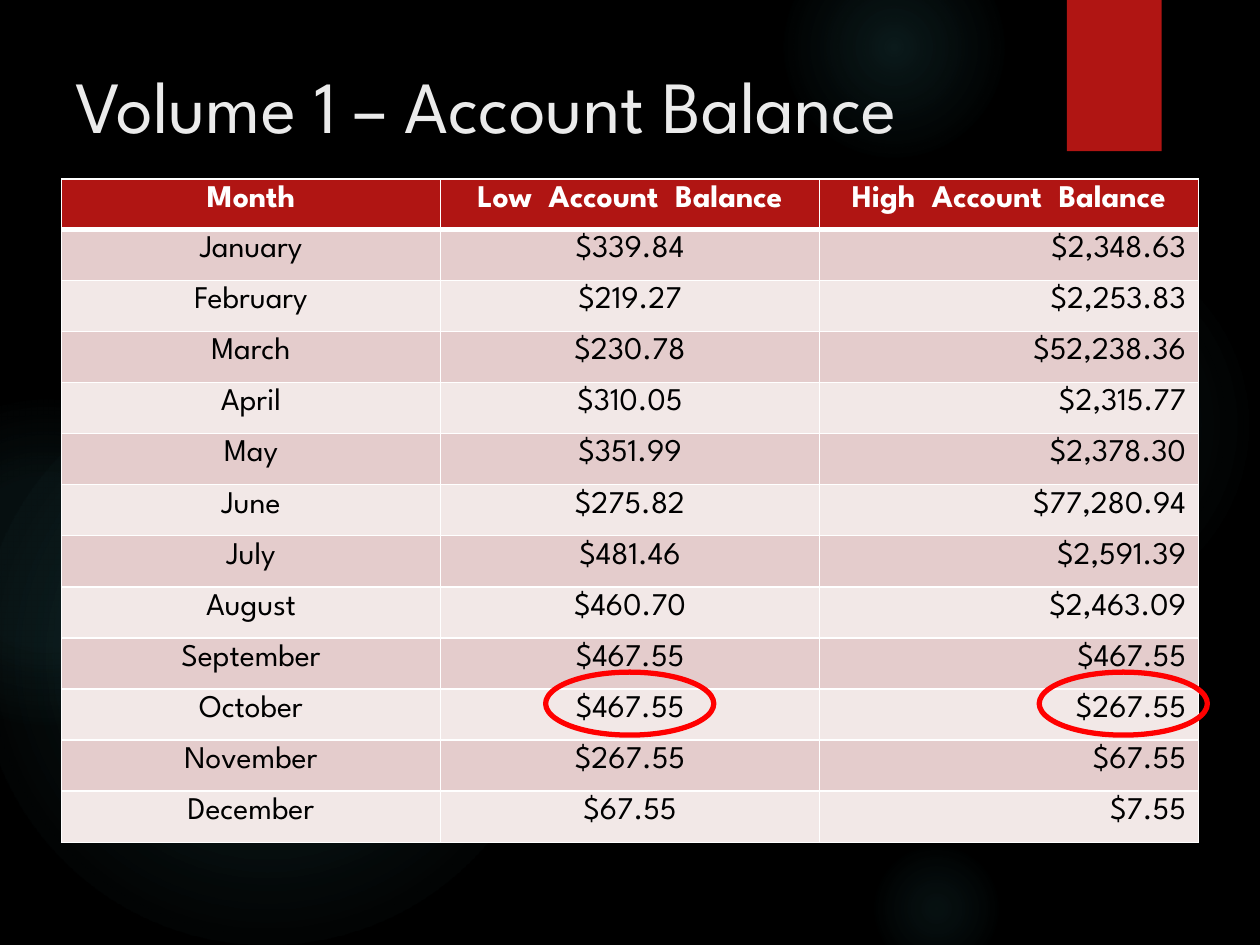
from lxml import etree
from pptx import Presentation
from pptx.dml.color import RGBColor
from pptx.enum.shapes import MSO_SHAPE
from pptx.enum.text import MSO_ANCHOR, PP_ALIGN
from pptx.oxml import parse_xml
from pptx.oxml.ns import nsdecls
from pptx.util import Cm, Pt

OVAL, RECTANGLE = MSO_SHAPE.OVAL, MSO_SHAPE.RECTANGLE
CENTER, RIGHT = PP_ALIGN.CENTER, PP_ALIGN.RIGHT
FONT = "League Spartan"
BLACK, WHITE, RED, TEAL = "000000", "FFFFFF", "B01513", "50B9C1"
BANDS = ("E4CCCC", "F2E8E7")

# Content
TITLE = "Volume 1 – Account Balance"
HEADER = ("Month", "Low  Account  Balance", "High  Account  Balance")
BALANCES = [
    ("January", "$339.84", "$2,348.63"),
    ("February", "$219.27", "$2,253.83"),
    ("March", "$230.78", "$52,238.36"),
    ("April", "$310.05", "$2,315.77"),
    ("May", "$351.99", "$2,378.30"),
    ("June", "$275.82", "$77,280.94"),
    ("July", "$481.46", "$2,591.39"),
    ("August", "$460.70", "$2,463.09"),
    ("September", "$467.55", "$467.55"),
    ("October", "$467.55", "$267.55"),
    ("November", "$267.55", "$67.55"),
    ("December", "$67.55", "$7.55"),
]
# Background glows: left, top, diameter in cm, then (position, opacity) in percent
GLOWS = [
    (17.5, 4.65, 7.82, ((0, 7), (36, 6), (69, 0))),
    (15.8, -1.27, 4.45, ((0, 14), (36, 7), (73, 0))),
    (17.5, 16.94, 2.74, ((0, 9), (36, 5), (66, 0))),
    (-0.43, 7.42, 11.63, ((0, 11), (36, 10), (75, 0))),
    (-2.34, 8.05, 6.55, ((0, 8), (36, 8), (72, 0))),
]
HIGHLIGHT_LEFTS = (20.95, 11)
COLUMN_WIDTH, HEADER_HEIGHT, ROW_HEIGHT = 7.64, 1.01, 1.03


def color(hex_code):
    return RGBColor.from_string(hex_code)


def add_shape(page, kind, left, top, width, height):
    shape = page.shapes.add_shape(kind, Cm(left), Cm(top), Cm(width), Cm(height))
    shape.shadow.inherit = False
    shape.fill.background()
    shape.line.fill.background()
    return shape


def add_glow(page, left, top, diameter, stops):
    glow = add_shape(page, OVAL, left, top, diameter, diameter)
    stop_xml = "".join(
        f'<a:gs pos="{position * 1000}"><a:srgbClr val="{TEAL}">'
        f'<a:alpha val="{opacity * 1000}"/></a:srgbClr></a:gs>'
        for position, opacity in stops
    )
    gradient = parse_xml(
        f'<a:gradFill {nsdecls("a")} rotWithShape="1"><a:gsLst>{stop_xml}</a:gsLst>'
        '<a:path path="circle"><a:fillToRect l="50000" t="50000" r="50000" b="50000"/>'
        "</a:path></a:gradFill>"
    )
    properties = glow.element.spPr
    properties.replace(properties.find("{*}noFill"), gradient)


def style_text(paragraph, size, hex_code, bold=False):
    for span in paragraph.runs:
        span.font.name = FONT
        span.font.size = Pt(size)
        span.font.bold = bold
        span.font.color.rgb = color(hex_code)


def set_borders(cell, top, bottom):
    properties = cell._tc.get_or_add_tcPr()
    for side, width in (("L", 1), ("R", 1), ("T", top), ("B", bottom)):
        properties.append(parse_xml(
            f'<a:ln{side} {nsdecls("a")} w="{Pt(width)}"><a:solidFill>'
            f'<a:srgbClr val="{WHITE}"/></a:solidFill></a:ln{side}>'
        ))


def add_balance_table(page):
    rows = [HEADER] + BALANCES
    height = HEADER_HEIGHT + ROW_HEIGHT * len(BALANCES)
    table = page.shapes.add_table(
        len(rows), len(HEADER), Cm(1.24), Cm(3.61),
        Cm(COLUMN_WIDTH * len(HEADER)), Cm(height),
    ).table
    for column in table.columns:
        column.width = Cm(COLUMN_WIDTH)
    for r, values in enumerate(rows):
        is_header = r == 0
        table.rows[r].height = Cm(HEADER_HEIGHT if is_header else ROW_HEIGHT)
        for c, value in enumerate(values):
            cell = table.cell(r, c)
            set_borders(cell, top=3 if r == 1 else 1, bottom=3 if is_header else 1)
            cell.fill.solid()
            cell.fill.fore_color.rgb = color(RED if is_header else BANDS[(r - 1) % 2])
            paragraph = cell.text_frame.paragraphs[0]
            paragraph.text = value
            paragraph.alignment = RIGHT if c == 2 and not is_header else CENTER
            style_text(paragraph, 18, WHITE if is_header else BLACK, is_header)


def main():
    deck = Presentation()
    deck.slide_width, deck.slide_height = Cm(25.4), Cm(19.05)
    page = deck.slides.add_slide(deck.slide_layouts[5])
    page.background.fill.solid()
    page.background.fill.fore_color.rgb = color(BLACK)

    # Backdrop
    for glow in GLOWS:
        add_glow(page, *glow)
    ribbon = add_shape(page, RECTANGLE, 21.51, 0, 1.91, 3.05)
    ribbon.fill.solid()
    ribbon.fill.fore_color.rgb = color(RED)

    # Title, brought in front of the backdrop
    title = page.shapes.title
    title.element.getparent().append(title.element)
    title.left, title.top, title.width, title.height = Cm(1.27), Cm(0.64), Cm(22.86), Cm(3.18)
    title.text_frame.text = TITLE
    title.text_frame.vertical_anchor = MSO_ANCHOR.TOP
    title.text_frame.margin_top = Cm(0.57)
    heading = title.text_frame.paragraphs[0]
    heading.alignment = PP_ALIGN.LEFT
    style_text(heading, 42, "EBEBEB")

    add_balance_table(page)

    # Rings around the October balances
    for left in HIGHLIGHT_LEFTS:
        ring = add_shape(page, OVAL, left, 13.55, 3.39, 1.27)
        ring.line.color.rgb = color("FF0000")
        ring.line.width = Pt(3)

    deck.save("out.pptx")


if __name__ == "__main__":
    main()
